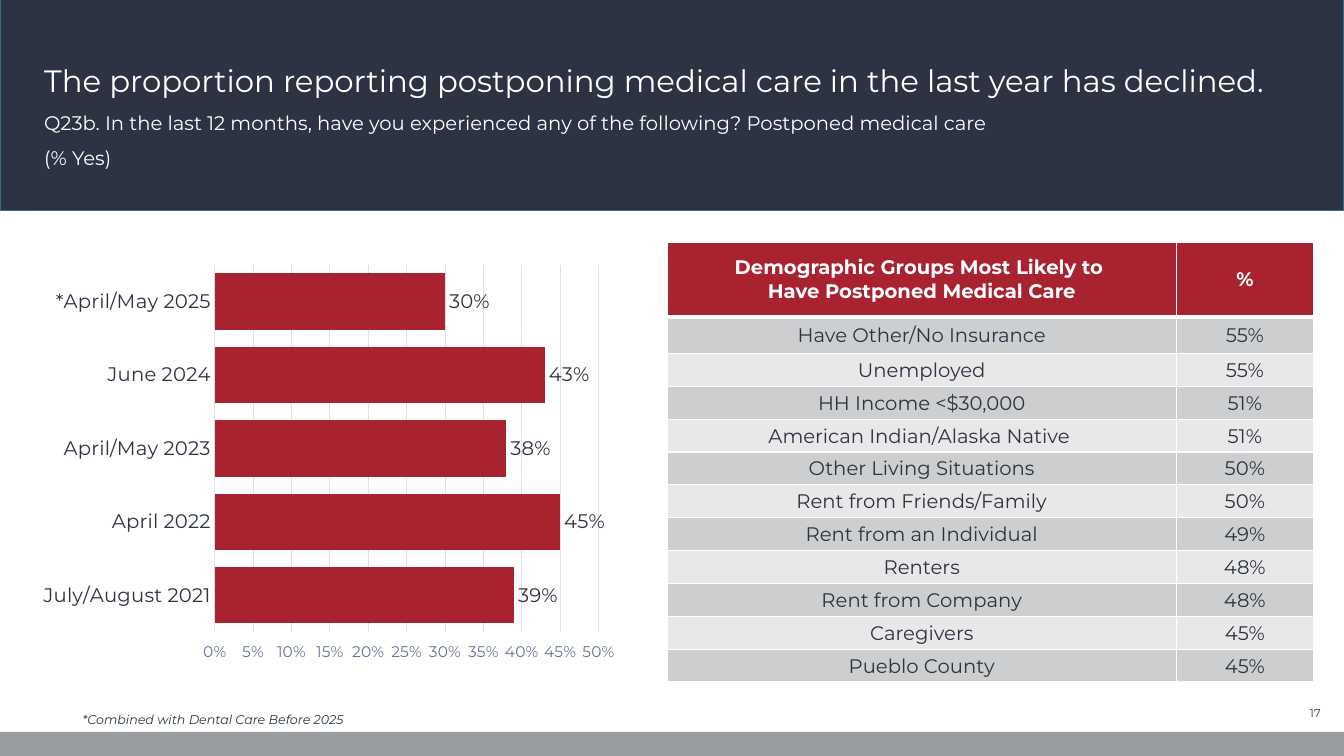
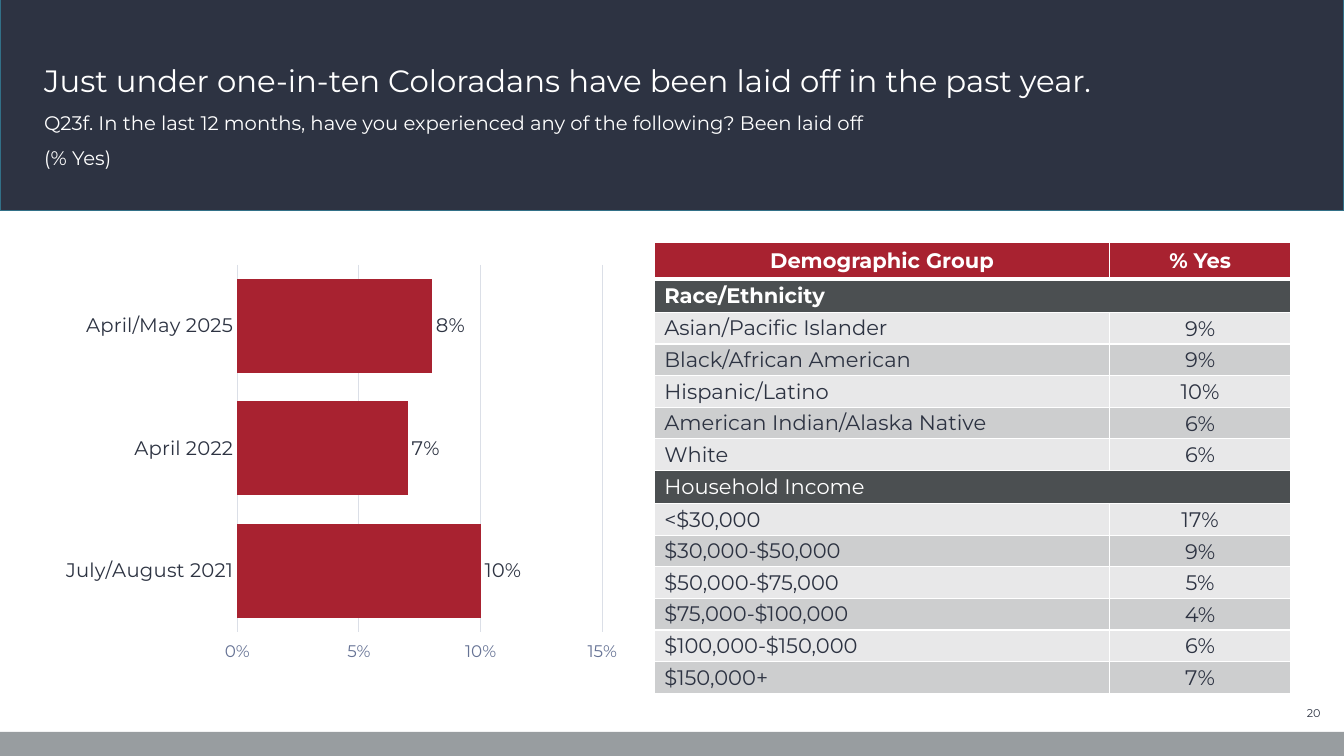
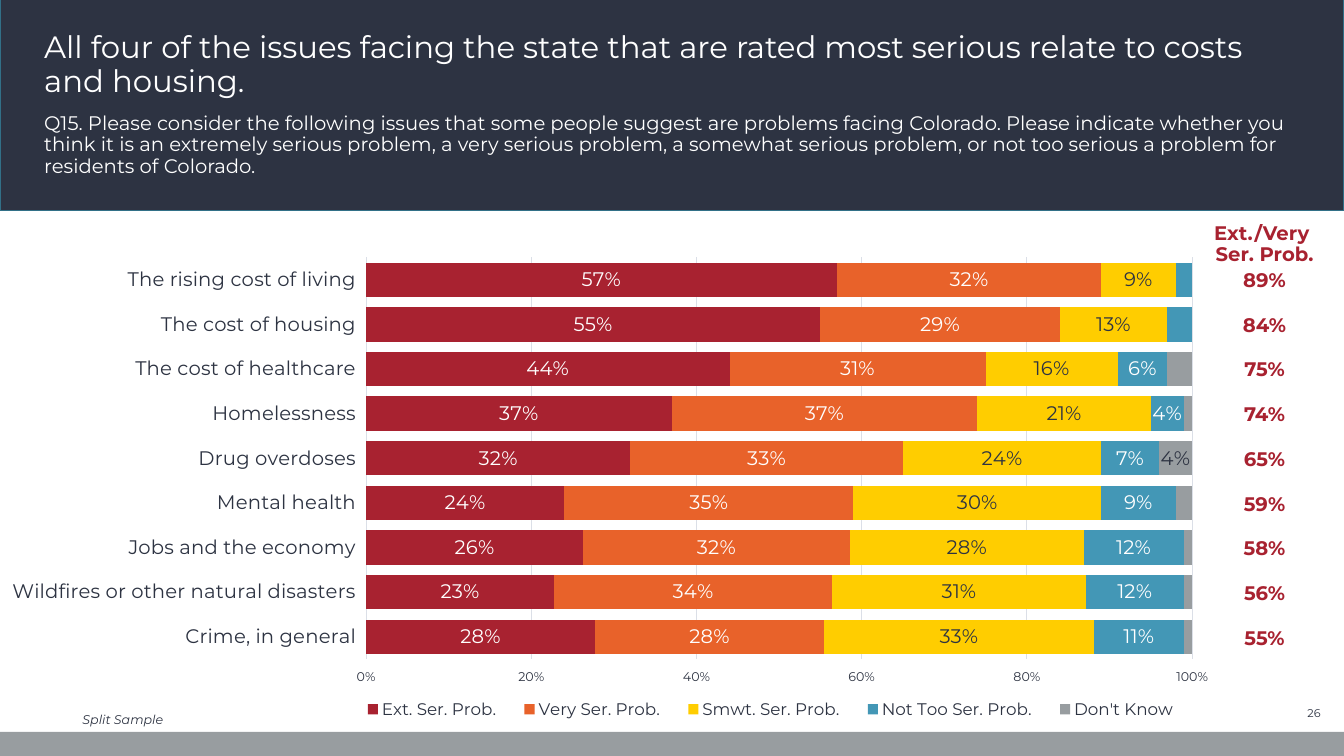
from pptx import Presentation
from pptx.chart.data import CategoryChartData
from pptx.dml.color import RGBColor
from pptx.enum.chart import XL_CHART_TYPE as ChartType, XL_LABEL_POSITION as LabelPos
from pptx.enum.chart import XL_LEGEND_POSITION as LegendPos, XL_TICK_MARK as Tick
from pptx.enum.chart import XL_TICK_LABEL_POSITION as TickLabelPos
from pptx.enum.shapes import MSO_SHAPE as Shape
from pptx.enum.text import MSO_ANCHOR as Anchor, PP_ALIGN as Align
from pptx.oxml import parse_xml
from pptx.oxml.ns import nsdecls
from pptx.util import Inches, Pt

FONT = "Montserrat"
COLORS = {name: RGBColor.from_string(value) for name, value in {
    "navy": "2D3342", "teal": "327087", "gray": "989DA0", "white": "FFFFFF",
    "red": "A82230", "orange": "E8622A", "yellow": "FFCD00", "blue": "4397B6",
    "grid": "DBDFE7", "slate": "667395", "section": "4B4F51",
    "dark": "CDCECF", "light": "E8E8E9"}.items()}

deck = Presentation()
deck.slide_width, deck.slide_height = Inches(13.333), Inches(7.5)


def area(left, top, width, height):
    """Turn percentages of the slide into lengths."""
    w, h = deck.slide_width / 100, deck.slide_height / 100
    return [int(left * w), int(top * h), int(width * w), int(height * h)]


def write(frame, text, size, color, bold=False, italic=False, align=Align.LEFT, spacing=None):
    frame.text = text
    for index, paragraph in enumerate(frame.paragraphs):
        paragraph.alignment = align
        paragraph.line_spacing = spacing
        if index:
            paragraph.space_before = Pt(10)
        for run in paragraph.runs:
            font = run.font
            font.name, font.size, font.bold, font.italic = FONT, Pt(size), bold, italic
            font.color.rgb = COLORS[color]


# Areas in percent of the slide
BAND, FOOTER = (0, -0.4, 100, 28.27), (0, 96.8, 100, 3.2)
TITLE, QUESTION = (2.55, 0.8, 94.8, 12.93), (2.55, 14.4, 94.8, 12.27)
NOTE, PAGE = (5.4, 92.67, 87.68, 4.13), (93.15, 92.67, 5.85, 3.2)
TREND = (0, 33.87, 46.35, 58.8)

# Cell margins in inches: left, top, right, bottom
PLAIN, TIGHT, NONE = (0.1, 0.05, 0.1, 0.05), (0.01, 0.01, 0.01, 0), (0, 0, 0, 0)
ROOMY, SECTION, LABEL = (0.1, 0.06, 0.1, 0.06), (0.1, 0.04, 0.1, 0.04), (0.1, 0.03, 0.1, 0.03)

# A table row with None as its value is a section heading
postponed_rows = [
    ("Demographic Groups Most Likely to \vHave Postponed Medical Care", "%"),
    ("Have Other/No Insurance", "55%"), ("Unemployed", "55%"),
    ("HH Income <$30,000", "51%"), ("American Indian/Alaska Native ", "51%"),
    ("Other Living Situations", "50%"), ("Rent from Friends/Family", "50%"),
    ("Rent from an Individual", "49%"), ("Renters", "48%"),
    ("Rent from Company", "48%"), ("Caregivers", "45%"), ("Pueblo County", "45%")]
laid_off_rows = [
    ("Demographic Group", "% Yes"),
    ("Race/Ethnicity", None), ("Asian/Pacific Islander", "9%"),
    ("Black/African American", "9%"), ("Hispanic/Latino", "10%"),
    ("American Indian/Alaska Native", "6%"), ("White", "6%"),
    ("Household Income", None), ("<$30,000", "17%"), ("$30,000-$50,000", "9%"),
    ("$50,000-$75,000", "5%"), ("$75,000-$100,000", "4%"),
    ("$100,000-$150,000", "6%"), ("$150,000+", "7%")]
serious_rows = [("Ext./Very \vSer. Prob.",)] + [
    (f"{share}%",) for share in (89, 84, 75, 74, 65, 59, 58, 56, 55)]

slides = [
    {"page": "17",
     "title": "The proportion reporting postponing medical care in the last year has declined.",
     "question": "Q23b. In the last 12 months, have you experienced any of the following? "
                 "Postponed medical care\n(% Yes)",
     "note": "*Combined with Dental Care Before 2025",
     "chart": {
         "area": TREND, "plot": (0.345, 0.02, 0.616, 0.826), "stacked": False,
         "top": 0.5, "step": 0.05, "axis_font": (11, "slate"),
         "categories": ["*April/May 2025", "June 2024", "April/May 2023", "April 2022",
                        "July/August 2021"],
         "series": [("Series 1", "red", "navy", [0.3, 0.43, 0.38, 0.45, 0.39])]},
     "table": {
         "corner": (49.65, 32), "columns": (37.88, 10.2), "rows": postponed_rows,
         "heights": [9.95, 4.8] + [4.35] * 10, "size": 14, "bold": {0},
         "shades": ("dark", "light"), "head": PLAIN, "label": TIGHT,
         "label_align": Align.CENTER}},
    {"page": "20",
     "title": "Just under one-in-ten Coloradans have been laid off in the past year.",
     "question": "Q23f. In the last 12 months, have you experienced any of the following? "
                 "Been laid off\n(% Yes)",
     "note": None,
     "chart": {
         "area": TREND, "plot": (0.381, 0.02, 0.586, 0.826), "stacked": False,
         "top": 0.15, "step": 0.05, "axis_font": (12, "slate"),
         "categories": ["April/May 2025", "April 2022", "July/August 2021"],
         "series": [("Series 1", "red", "navy", [0.08, 0.07, 0.1])]},
     "table": {
         "corner": (48.68, 32), "columns": (33.9, 13.43), "rows": laid_off_rows,
         "heights": [4.93] + [4.4 if value is None else 4.18 for _, value in laid_off_rows[1:]],
         "size": 15, "bold": {0, 1}, "shades": ("light", "dark"), "head": ROOMY,
         "label": LABEL, "label_align": Align.LEFT}},
    {"page": "26",
     "title": "All four of the issues facing the state that are rated most serious relate to "
              "costs and housing.",
     "question": "Q15. Please consider the following issues that some people suggest are problems "
                 "facing Colorado. Please indicate whether you think it is an extremely serious "
                 "problem, a very serious problem, a somewhat serious problem, or not too serious "
                 "a problem for residents of Colorado.",
     "note": "Split Sample",
     "chart": {
         "area": (0, 32, 91.73, 64.4), "plot": (0.297, 0.032, 0.67, 0.825), "stacked": True,
         "top": 1, "step": 0.2, "axis_font": (9, "navy"),
         "categories": ["The rising cost of living", "The cost of housing",
                        "The cost of healthcare", "Homelessness", "Drug overdoses",
                        "Mental health", "Jobs and the economy",
                        "Wildfires or other natural disasters", "Crime, in general"],
         "series": [
             ("Ext. Ser. Prob.", "red", "white",
              [0.57, 0.55, 0.44, 0.37, 0.32, 0.24, 0.26, 0.23, 0.28]),
             ("Very Ser. Prob.", "orange", "white",
              [0.32, 0.29, 0.31, 0.37, 0.33, 0.35, 0.32, 0.34, 0.28]),
             ("Smwt. Ser. Prob.", "yellow", "navy",
              [0.09, 0.13, 0.16, 0.21, 0.24, 0.3, 0.28, 0.31, 0.33]),
             ("Not Too Ser. Prob.", "blue", "white",
              [0.02, 0.03, 0.06, 0.04, 0.07, 0.09, 0.12, 0.12, 0.11]),
             ("Don't Know", "gray", "navy",
              [0, 0, 0.03, 0.01, 0.04, 0.02, 0.01, 0.01, 0.01])]},
     "table": {
         "corner": (88.95, 29.6), "columns": (10.28,), "rows": serious_rows,
         "heights": [5.6, 3.47] + [5.92] * 8, "size": 14, "bold": set(range(10)),
         "shades": None, "head": NONE, "label": NONE, "label_align": Align.CENTER}},
]

for content in slides:
    slide = deck.slides.add_slide(deck.slide_layouts[6])

    # Title band and footer bar
    for place, fill, edge in ((BAND, "navy", "teal"), (FOOTER, "gray", None)):
        bar = slide.shapes.add_shape(Shape.RECTANGLE, *area(*place))
        bar.shadow.inherit = False
        bar.fill.solid()
        bar.fill.fore_color.rgb = COLORS[fill]
        if edge:
            bar.line.color.rgb, bar.line.width = COLORS[edge], Pt(1)
        else:
            bar.line.fill.background()

    # Title, question, footnote and page number
    for part, place, size, color, anchor, align, spacing in (
            ("title", TITLE, 22, "white", Anchor.BOTTOM, Align.LEFT, 0.9),
            ("question", QUESTION, 14, "white", Anchor.TOP, Align.LEFT, 0.9),
            ("note", NOTE, 9, "navy", Anchor.BOTTOM, Align.LEFT, 0.9),
            ("page", PAGE, 8, "navy", Anchor.MIDDLE, Align.RIGHT, None)):
        if content[part]:
            frame = slide.shapes.add_textbox(*area(*place)).text_frame
            frame.word_wrap, frame.vertical_anchor = True, anchor
            write(frame, content[part], size, color, italic=part == "note",
                  align=align, spacing=spacing)

    # Bar chart
    spec = content["chart"]
    stacked = spec["stacked"]
    data = CategoryChartData(number_format="0%")
    data.categories = spec["categories"]
    for name, _, _, values in spec["series"]:
        data.add_series(name, values)
    kind = ChartType.BAR_STACKED_100 if stacked else ChartType.BAR_CLUSTERED
    chart = slide.shapes.add_chart(kind, *area(*spec["area"]), data).chart
    chart.has_title, chart.has_legend = False, stacked
    chart.font.name, chart.font.size = FONT, Pt(14)
    chart.font.color.rgb = COLORS["navy"]
    bars = chart.plots[0]
    bars.gap_width, bars.vary_by_categories = 30, False
    if stacked:
        bars.overlap = 100
    for series, (_, fill, label_color, _) in zip(bars.series, spec["series"]):
        series.format.fill.solid()
        series.format.fill.fore_color.rgb = COLORS[fill]
        series.invert_if_negative = False
        labels = series.data_labels
        labels.show_value = True
        labels.number_format_is_linked = False
        # Narrow stacked segments carry no label
        labels.number_format = '[<0.035]"";0%' if stacked else "0%"
        labels.position = LabelPos.CENTER if stacked else LabelPos.OUTSIDE_END
        labels.font.name, labels.font.size = FONT, Pt(14)
        labels.font.color.rgb = COLORS[label_color]

    # Axes: categories run downwards, so the high end of the scale's labels is the bottom
    issues, scale = chart.category_axis, chart.value_axis
    issues.reverse_order = True
    scale.tick_label_position = TickLabelPos.HIGH
    scale.minimum_scale, scale.maximum_scale = 0, spec["top"]
    scale.major_unit = spec["step"]
    scale.tick_labels.number_format = "0%"
    scale.tick_labels.number_format_is_linked = False
    scale.major_gridlines.format.line.color.rgb = COLORS["grid"]
    scale.major_gridlines.format.line.width = Pt(0.75)
    scale.format.line.fill.background()
    if stacked:
        issues.format.line.fill.background()
    else:
        issues.format.line.color.rgb = COLORS["grid"]
        issues.format.line.width = Pt(0.75)
    for axis, (size, color) in ((issues, (14, "navy")), (scale, spec["axis_font"])):
        axis.major_tick_mark = Tick.OUTSIDE if stacked else Tick.NONE
        axis.minor_tick_mark = Tick.NONE
        axis.tick_labels.font.name, axis.tick_labels.font.size = FONT, Pt(size)
        axis.tick_labels.font.color.rgb = COLORS[color]

    # Fixed places of the plot and the legend inside the chart
    plot_area = chart._chartSpace.xpath("c:chart/c:plotArea")[0]
    fixed = [(plot_area, 0, '<c:layoutTarget val="inner"/>', spec["plot"])]
    if stacked:
        legend = chart.legend
        legend.position, legend.include_in_layout = LegendPos.BOTTOM, False
        legend.font.name, legend.font.size = FONT, Pt(12)
        legend.font.color.rgb = COLORS["navy"]
        fixed.append((legend._element, 1, "", (0.28, 0.93, 0.69, 0.06)))
    for parent, index, target, (x, y, w, h) in fixed:
        for old in parent.xpath("c:layout"):
            parent.remove(old)
        parent.insert(index, parse_xml(
            f'<c:layout {nsdecls("c")}><c:manualLayout>{target}'
            '<c:xMode val="edge"/><c:yMode val="edge"/>'
            f'<c:x val="{x}"/><c:y val="{y}"/><c:w val="{w}"/><c:h val="{h}"/>'
            '</c:manualLayout></c:layout>'))

    # Table
    spec = content["table"]
    rows, columns, shades = spec["rows"], spec["columns"], spec["shades"]
    place = area(*spec["corner"], sum(columns), sum(spec["heights"]))
    table = slide.shapes.add_table(len(rows), len(columns), *place).table
    table.horz_banding = False
    for column, width in zip(table.columns, columns):
        column.width = area(0, 0, width, 0)[2]
    stripe = 0
    for r, (row, height) in enumerate(zip(rows, spec["heights"])):
        table.rows[r].height = area(0, 0, 0, height)[3]
        section = None in row
        if section:
            table.cell(r, 0).merge(table.cell(r, 1))
        if r == 0:
            fill, color = "red", "white"
        elif section:
            fill, color, stripe = "section", "white", 0
        elif shades:
            fill, color = shades[stripe % 2], "navy"
            stripe += 1
        for c, text in enumerate(row):
            cell = table.cell(r, c)
            if text is None:
                margins = NONE
            elif r == 0:
                margins = spec["head"]
            elif section:
                margins = SECTION
            else:
                margins = TIGHT if c else spec["label"]
            (cell.margin_left, cell.margin_top,
             cell.margin_right, cell.margin_bottom) = map(Inches, margins)
            if shades:
                cell.vertical_anchor = Anchor.MIDDLE
                for i, side in enumerate("LRTB"):
                    points = 3 if (r, side) in ((0, "B"), (1, "T")) else 1
                    cell._tc.get_or_add_tcPr().insert(i, parse_xml(
                        f'<a:ln{side} {nsdecls("a")} w="{Pt(points)}"><a:solidFill>'
                        f'<a:srgbClr val="{COLORS["white"]}"/></a:solidFill></a:ln{side}>'))
                cell.fill.solid()
                cell.fill.fore_color.rgb = COLORS[fill]
            else:
                cell.vertical_anchor = Anchor.BOTTOM
                cell.fill.background()
            if text:
                align = Align.CENTER if c or r == 0 else spec["label_align"]
                write(cell.text_frame, text, spec["size"], color if shades else "red",
                      bold=r in spec["bold"], align=Align.LEFT if section else align,
                      spacing=None if shades or r else Pt(15))

deck.save("out.pptx")
